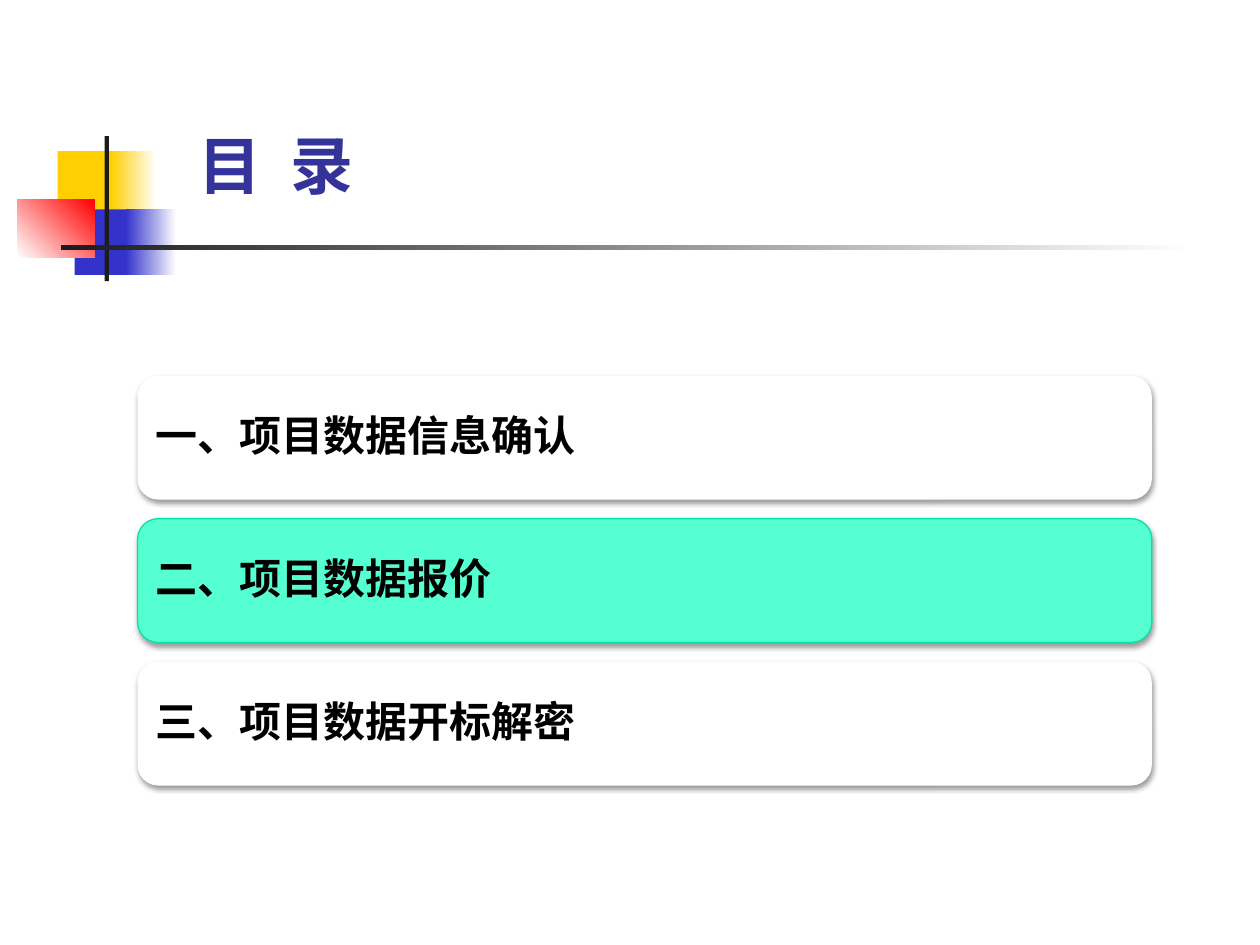
from pptx import Presentation
from pptx.dml.color import RGBColor as RGB
from pptx.enum.shapes import MSO_SHAPE as SHAPE
from pptx.enum.text import MSO_ANCHOR as ANCHOR, PP_ALIGN as ALIGN
from pptx.oxml import parse_xml
from pptx.oxml.ns import nsdecls
from pptx.util import Pt

GOLD = RGB(0xFF, 0xCF, 0x01)
BLUE = RGB(0x33, 0x33, 0xCC)
RED = RGB(0xFF, 0x00, 0x00)
INK = RGB(0x1C, 0x1C, 0x1C)
WHITE = RGB(0xFF, 0xFF, 0xFF)
BLACK = RGB(0x00, 0x00, 0x00)
NAVY = RGB(0x33, 0x33, 0x99)
MINT = RGB(0x56, 0xFF, 0xD2)
GREEN = RGB(0x00, 0xE4, 0xA8)
HAN = "Noto Sans CJK SC"

SHADOW = (
    f'<a:effectLst {nsdecls("a")}>'
    '<a:outerShdw blurRad="39370" dist="20320" dir="5400000" rotWithShape="0">'
    '<a:srgbClr val="000000"><a:alpha val="38000"/></a:srgbClr>'
    '</a:outerShdw></a:effectLst>'
)

prs = Presentation()
prs.slide_width, prs.slide_height = Pt(720), Pt(540)
slide = prs.slides.add_slide(prs.slide_layouts[6])
shapes = slide.shapes


def add_box(kind, left, top, width, height):
    box = shapes.add_shape(kind, Pt(left), Pt(top), Pt(width), Pt(height))
    box.shadow.inherit = False
    box.line.fill.background()
    return box


def write(frame, text, size, color, face):
    """Fill the frame with one bold line, left and centred in height."""
    frame.word_wrap = True
    frame.vertical_anchor = ANCHOR.MIDDLE
    para = frame.paragraphs[0]
    para.alignment = ALIGN.LEFT
    run = para.add_run()
    run.text = text
    font = run.font
    font.size, font.bold, font.name = Pt(size), True, face
    font.color.rgb = color
    font._element.get_or_add_latin().addnext(
        parse_xml(f'<a:ea {nsdecls("a")} typeface="{HAN}"/>'))
    return para


# Ornament: left, top, width, height, first colour, last colour, angle
blocks = [
    (33, 86.4, 34.6, 37.4, GOLD, GOLD, 0),
    (63.4, 86.4, 25.9, 37.4, GOLD, WHITE, 0),
    (42.6, 119.7, 33.1, 37.4, BLUE, BLUE, 0),
    (72, 119.7, 28.8, 37.4, BLUE, WHITE, 0),
    (9.9, 113.8, 44.2, 33.2, WHITE, RED, 45),
    (59.8, 77.8, 2.5, 82.8, INK, INK, 0),
    (34.8, 140.2, 648, 2.5, INK, WHITE, 0),
]
for left, top, width, height, first, last, angle in blocks:
    fill = add_box(SHAPE.RECTANGLE, left, top, width, height).fill
    if first == last:
        fill.solid()
        fill.fore_color.rgb = first
    else:
        fill.gradient()
        fill.gradient_angle = angle
        for stop, color in zip(fill.gradient_stops, (first, last)):
            stop.color.rgb = color
            stop.position = 0 if color == first else 1

# Title
title = shapes.add_textbox(Pt(106.6), Pt(49), Pt(579.6), Pt(90))
write(title.text_frame, "目  录", 36, NAVY, HAN)

# Agenda cards, the current one in mint
items = ["一、项目数据信息确认", "二、项目数据报价", "三、项目数据开标解密"]
current = 1
for row, item in enumerate(items):
    card = add_box(SHAPE.ROUNDED_RECTANGLE, 78.6, 214.7 + 81.7 * row, 579.6, 70.8)
    card.fill.solid()
    card.fill.fore_color.rgb = WHITE
    if row == current:
        card.fill.fore_color.rgb = MINT
        card.line.color.rgb = GREEN
        card.line.width = Pt(0.75)
    props = card._element.spPr
    props.remove(props.find("{*}effectLst"))
    props.append(parse_xml(SHADOW))
    frame = card.text_frame
    frame.margin_left = frame.margin_right = Pt(7.2)
    frame.margin_top = frame.margin_bottom = Pt(7.2)
    write(frame, item, 24, BLACK, "Lato").line_spacing = 0.9

prs.save("out.pptx")
